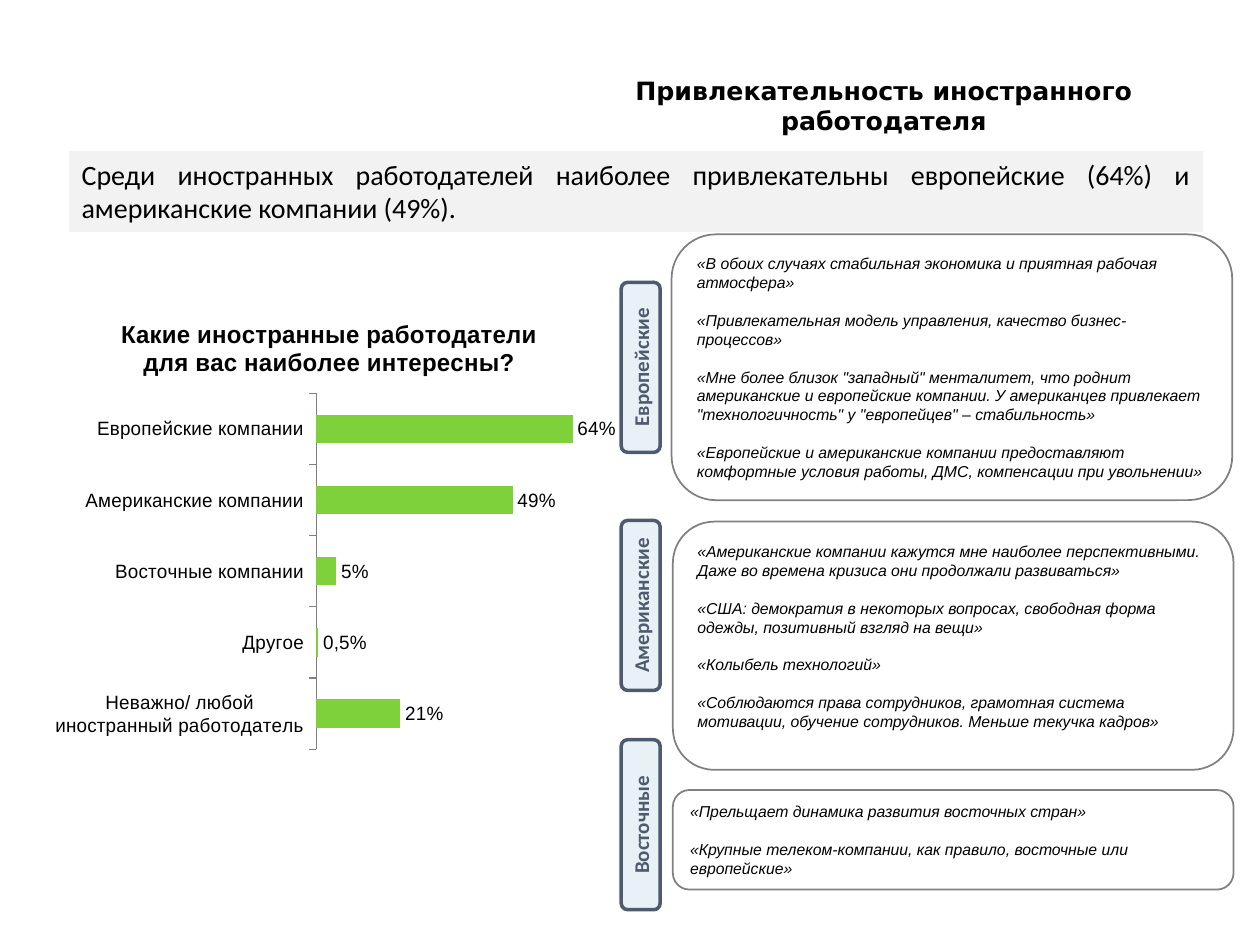
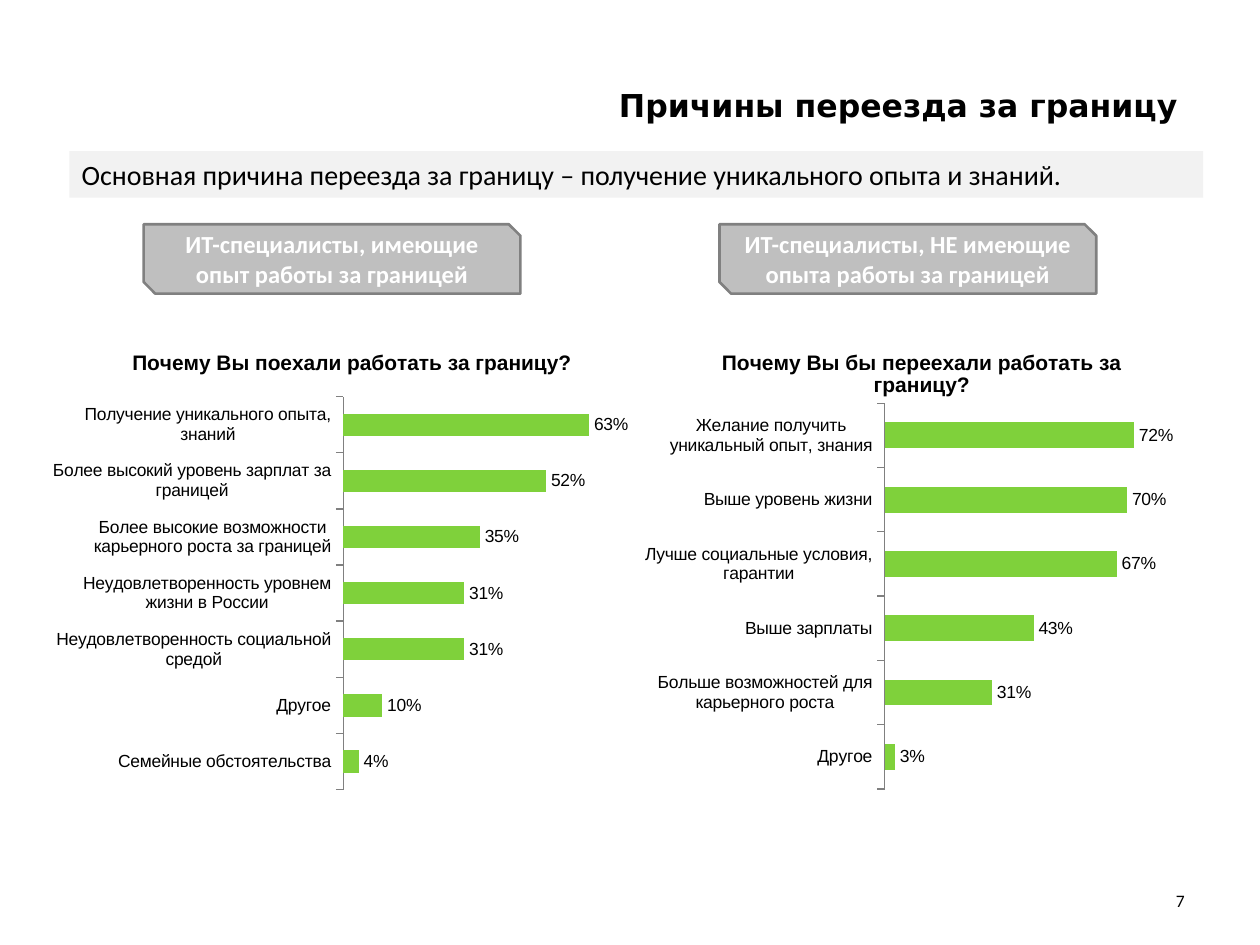
from pptx import Presentation
from pptx.chart.data import CategoryChartData as ChartData
from pptx.dml.color import RGBColor as RGB
from pptx.enum.chart import XL_CHART_TYPE as Kind, XL_LABEL_POSITION as Pos
from pptx.enum.chart import XL_TICK_LABEL_POSITION as Tick, XL_TICK_MARK as Mark
from pptx.enum.shapes import MSO_SHAPE as Form
from pptx.enum.text import MSO_ANCHOR as Anchor, MSO_AUTO_SIZE as Fit, PP_ALIGN as Align
from pptx.oxml import parse_xml
from pptx.oxml.ns import nsdecls, qn
from pptx.util import Inches, Pt

BLACK = RGB(0, 0, 0)
WHITE = RGB(255, 255, 255)
BAND = RGB(0xF2, 0xF2, 0xF2)
SILVER = RGB(0xBF, 0xBF, 0xBF)
GREY = RGB(0x80, 0x80, 0x80)
SLATE = RGB(0x4E, 0x5B, 0x6F)
PALE = RGB(0xE8, 0xF1, 0xF6)
GREEN = RGB(0x7F, 0xD1, 0x3B)

# Slide 1: label, label top, box left, box top, box height, extra room below, quotes
GROUPS = [
    ("Европейские", 2.76, 5.33, 1.86, 2.11, 0, [
        "«В обоих случаях стабильная экономика и приятная рабочая атмосфера»",
        "«Привлекательная модель управления, качество бизнес-процессов»",
        "«Мне более близок \"западный\" менталитет, что роднит американские и европейские "
        "компании. У американцев привлекает \"технологичность\" у \"европейцев\" – стабильность»",
        "«Европейские и американские компании предоставляют комфортные условия работы, "
        "ДМС, компенсации при увольнении»"]),
    ("Американские", 4.65, 5.34, 4.14, 1.97, 0.15, [
        "«Американские компании кажутся мне наиболее перспективными. "
        "Даже во времена кризиса они продолжали развиваться»",
        "«США: демократия в некоторых вопросах, свободная форма одежды, "
        "позитивный взгляд на вещи»",
        "«Колыбель технологий»",
        "«Соблюдаются права сотрудников, грамотная система мотивации, "
        "обучение сотрудников. Меньше текучка кадров»"]),
    ("Восточные", 6.39, 5.34, 6.27, 0.79, 0, [
        "«Прельщает динамика развития восточных стран»",
        "«Крупные телеком-компании, как правило, восточные или европейские»"]),
]

# Charts: frame, plot area and title corner (as shares of the frame), axis end, data
EMPLOYERS = dict(
    title="Какие иностранные работодатели для вас наиболее интересны?",
    frame=(0.4, 2.3, 4.49, 3.82), plot=(0.48, 0.215, 0.506, 0.74),
    corner=(0.12, 0.05), size=11, head=14, top=0.7, notes={3: "0,5%"},
    rows=[("Европейские компании", 0.64), ("Американские компании", 0.49),
          ("Восточные компании", 0.05), ("Другое", 0.005),
          ("Неважно/ любой иностранный работодатель", 0.21)])
WENT = dict(
    title="Почему Вы поехали работать за границу?",
    frame=(0.42, 2.57, 4.62, 3.86), plot=(0.496, 0.15, 0.472, 0.808),
    corner=(0.125, 0.045), top=0.7,
    rows=[("Получение уникального опыта, знаний", 0.63),
          ("Более высокий уровень зарплат за границей", 0.52),
          ("Более высокие возможности карьерного роста за границей", 0.35),
          ("Неудовлетворенность уровнем жизни в России", 0.31),
          ("Неудовлетворенность социальной средой", 0.31),
          ("Другое", 0.1), ("Семейные обстоятельства", 0.04)])
WOULD = dict(
    title="Почему Вы бы переехали работать за границу?",
    frame=(5.05, 2.57, 4.48, 3.8), plot=(0.44, 0.166, 0.491, 0.806),
    corner=(0.145, 0.045), top=0.8,
    rows=[("Желание получить уникальный опыт, знания", 0.72),
          ("Выше уровень жизни", 0.7), ("Лучше социальные условия, гарантии", 0.67),
          ("Выше зарплаты", 0.43), ("Больше возможностей для карьерного роста", 0.31),
          ("Другое", 0.03)])

# Slide 2: group heading, left edge, chart
SIDES = [("ИТ-специалисты, имеющие опыт работы за границей", 1.14, WENT),
         ("ИТ-специалисты, НЕ имеющие опыта работы за границей", 5.71, WOULD)]


def style(font, size, face="Arial", color=BLACK, bold=False, italic=False):
    font.size, font.name, font.bold, font.italic = Pt(size), face, bold, italic
    font.color.rgb = color


def write(shape, text, align=Align.LEFT, anchor=Anchor.MIDDLE, gap=0, **form):
    """Fill a shape with one text or a list of paragraphs."""
    frame = shape.text_frame
    frame.word_wrap, frame.vertical_anchor = True, anchor
    lines = [text] if isinstance(text, str) else text
    for i, line in enumerate(lines):
        para = frame.paragraphs[0] if i == 0 else frame.add_paragraph()
        para.alignment = align
        if i:
            para.space_before = Pt(gap)
        run = para.add_run()
        run.text = line
        style(run.font, **form)
    return frame


def label(slide, text, *at, **form):
    return write(slide.shapes.add_textbox(*map(Inches, at)), text, **form)


def block(slide, form, *at, fill=None, line=None, width=1):
    shape = slide.shapes.add_shape(form, *map(Inches, at))
    shape.shadow.inherit = False
    if fill is None:
        shape.fill.background()
    else:
        shape.fill.solid()
        shape.fill.fore_color.rgb = fill
    if line is None:
        shape.line.fill.background()
    else:
        shape.line.color.rgb, shape.line.width = line, Pt(width)
    return shape


def place(parent, index, inner=False, **spots):
    """Give a chart part a manual layout."""
    old = parent.find(qn("c:layout"))
    if old is not None:
        parent.remove(old)
    body = '<c:layoutTarget val="inner"/>' if inner else ""
    body += "".join(f'<c:{k}Mode val="edge"/>' for k in "xy")
    body += "".join(f'<c:{k} val="{v}"/>' for k, v in spots.items())
    parent.insert(index, parse_xml(
        f'<c:layout {nsdecls("c")}><c:manualLayout>{body}</c:manualLayout></c:layout>'))


def bars(slide, title, frame, plot, corner, rows, top, size=10, head=12, notes=None):
    data = ChartData(number_format="0%")
    data.categories = [name for name, _ in rows]
    data.add_series("Series 1", [value for _, value in rows])
    chart = slide.shapes.add_chart(Kind.BAR_CLUSTERED, *map(Inches, frame), data).chart
    style(chart.font, 10, "Calibri")
    chart.has_legend = False

    # Title and plot area
    chart.has_title = True
    para = chart.chart_title.text_frame.paragraphs[0]
    run = para.add_run()
    run.text = title
    style(run.font, head, bold=True)
    chart.chart_title.include_in_layout = False
    place(chart.chart_title.element, 1, **dict(zip("xy", corner)))
    place(chart.element.find(".//" + qn("c:plotArea")), 0, inner=True,
          **dict(zip("xywh", plot)))

    # Axes
    cats, vals = chart.category_axis, chart.value_axis
    cats.reverse_order = True
    cats.major_tick_mark, cats.minor_tick_mark = Mark.OUTSIDE, Mark.NONE
    cats.tick_label_position = Tick.NEXT_TO_AXIS
    cats.format.line.color.rgb = GREY
    style(cats.tick_labels.font, size)
    vals.has_major_gridlines = vals.visible = False
    vals.minimum_scale, vals.maximum_scale = 0, top

    # Bars and their labels
    bar = chart.plots[0]
    bar.gap_width, bar.vary_by_categories = 150, False
    series = bar.series[0]
    series.format.fill.solid()
    series.format.fill.fore_color.rgb = GREEN
    marks = series.data_labels
    marks.show_value, marks.position = True, Pos.OUTSIDE_END
    marks.number_format, marks.number_format_is_linked = "0%", False
    style(marks.font, size)
    for i, text in (notes or {}).items():
        mark = series.points[i].data_label
        run = mark.text_frame.paragraphs[0].add_run()
        run.text = text
        style(run.font, size)
        mark.position = Pos.OUTSIDE_END


def page(deck, title, left, size, lead, high):
    """Start a slide with its title and the grey band below it."""
    slide = deck.slides.add_slide(deck.slide_layouts[6])
    label(slide, title, left, 0.52, 9.5 - left, 0.63, align=Align.CENTER,
          size=size, face="DejaVu Sans", bold=True)
    band = block(slide, Form.RECTANGLE, 0.55, 1.2, 9, high, fill=BAND)
    write(band, lead, align=Align.JUSTIFY, anchor=Anchor.TOP, size=16,
          face="Calibri").auto_size = Fit.SHAPE_TO_FIT_TEXT
    return slide


def main():
    deck = Presentation()
    deck.slide_width, deck.slide_height = Inches(10), Inches(7.5)

    # Slide 1: appeal of foreign employers
    slide = page(deck, "Привлекательность иностранного работодателя", 4.53, 14.4,
                 "Среди иностранных работодателей наиболее привлекательны "
                 "европейские (64%) и американские компании (49%).", 0.64)
    for name, mid, left, top, high, room, quotes in GROUPS:
        box = block(slide, Form.ROUNDED_RECTANGLE, left, top, 4.45, high, line=GREY)
        frame = write(box, quotes, gap=10.8, size=9, italic=True)
        frame.margin_bottom = Inches(0.05 + room)
        tag = block(slide, Form.ROUNDED_RECTANGLE, 4.41, mid, 1.35, 0.31,
                    fill=PALE, line=SLATE, width=2)
        tag.rotation = 270
        write(tag, name, align=Align.CENTER, size=12, face="Calibri",
              color=SLATE, bold=True)
    bars(slide, **EMPLOYERS)

    # Slide 2: reasons for moving abroad
    slide = page(deck, "Причины переезда за границу", 4.76, 18,
                 "Основная причина переезда за границу – получение "
                 "уникального опыта и знаний.", 0.37)
    for name, left, chart in SIDES:
        head = block(slide, Form.SNIP_2_DIAG_RECTANGLE, left, 1.78, 2.99, 0.55,
                     fill=SILVER, line=GREY, width=1.5)
        write(head, name, align=Align.CENTER, size=14, face="Calibri",
              color=WHITE, bold=True)
        bars(slide, **chart)
    label(slide, "7", 7.17, 6.95, 2.33, 0.4, align=Align.RIGHT, size=10, face="Calibri")

    deck.save("out.pptx")


if __name__ == "__main__":
    main()
